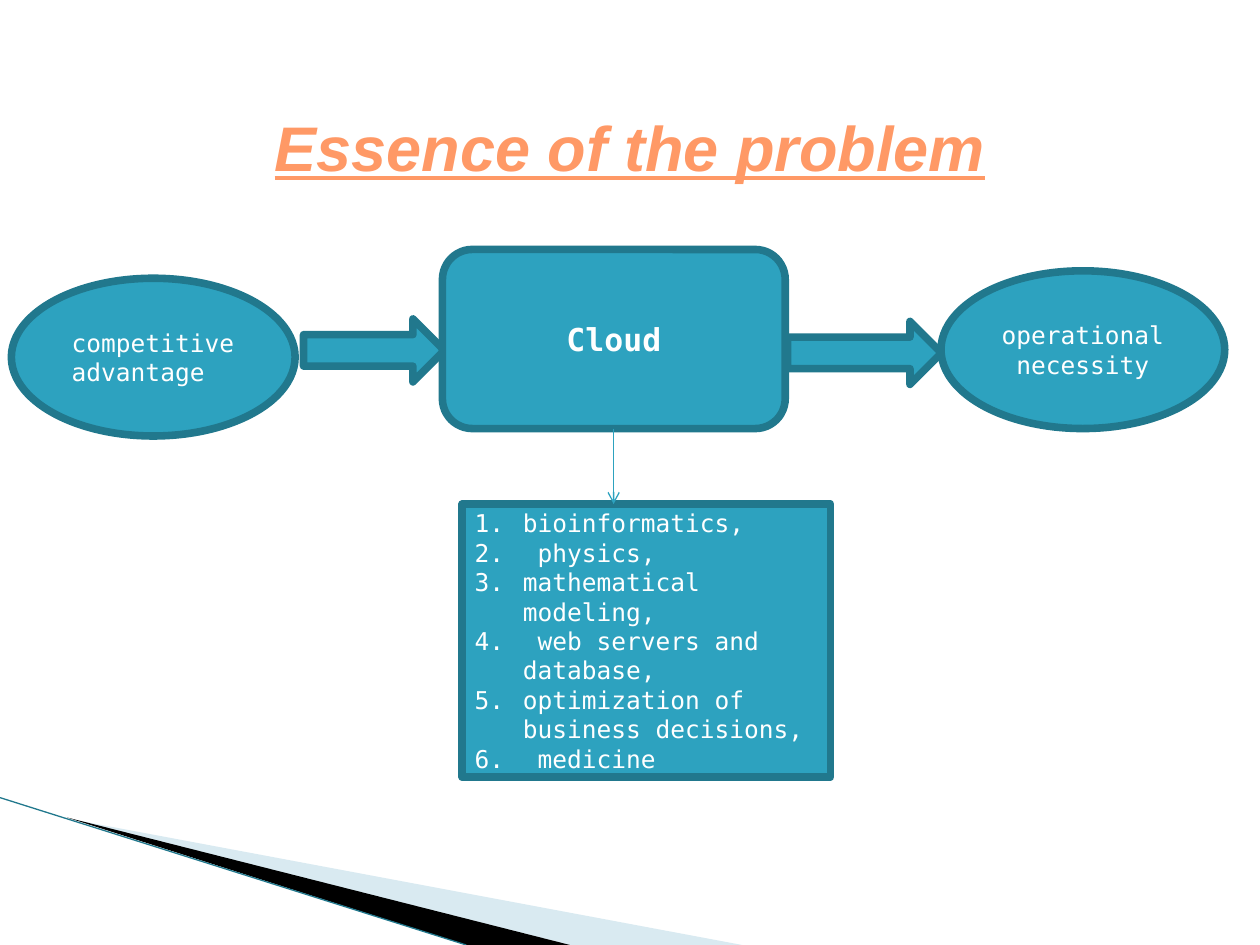
from dataclasses import dataclass
from typing import Any

from pptx import Presentation
from pptx.dml.color import RGBColor
from pptx.enum.shapes import MSO_CONNECTOR, MSO_SHAPE
from pptx.enum.text import MSO_ANCHOR, PP_ALIGN
from pptx.oxml.ns import qn
from pptx.util import Cm, Pt
from lxml.etree import SubElement


@dataclass(frozen=True)
class Theme:
    fill: RGBColor = RGBColor(0x2D, 0xA2, 0xBF)
    outline: RGBColor = RGBColor(0x21, 0x78, 0x8D)
    title: RGBColor = RGBColor(0xFF, 0x99, 0x66)
    text: RGBColor = RGBColor(0xFF, 0xFF, 0xFF)
    pale: RGBColor = RGBColor(0xD9, 0xEA, 0xF1)
    dark: RGBColor = RGBColor(0, 0, 0)
    title_font: str = "Arial"
    body_font: str = "DejaVu Sans Mono"
    title_size: Pt = Pt(36)
    heading_size: Pt = Pt(18)
    body_size: Pt = Pt(14)
    outline_width: Pt = Pt(4.33)
    thin_width: Pt = Pt(0.75)


THEME = Theme()
BODY = {"name": THEME.body_font, "size": THEME.body_size, "bold": False}
HEADING = {**BODY, "size": THEME.heading_size, "bold": True}
TITLE = {"name": THEME.title_font, "size": THEME.title_size,
         "bold": True, "italic": True, "underline": True}


@dataclass(frozen=True)
class Node:
    """A filled outline shape, placed in centimetres."""
    kind: MSO_SHAPE
    left: float
    top: float
    width: float
    height: float
    lines: tuple[str, ...] = ()
    font: Any = None
    align: PP_ALIGN = PP_ALIGN.CENTER
    inset: float = 0.25
    numbered: bool = False


@dataclass(frozen=True)
class Wedge:
    points: tuple[tuple[float, float], ...]
    color: RGBColor


WEDGES = (
    Wedge(((1.4, 16.51), (14.96, 19.05), (11.49, 19.05)), THEME.pale),
    Wedge(((1.35, 16.48), (11.49, 19.05), (9.4, 19.05)), THEME.dark),
)
NODES = (
    Node(MSO_SHAPE.RIGHT_ARROW, 15.88, 6.48, 3.1, 1.27),
    Node(MSO_SHAPE.RIGHT_ARROW, 6.12, 6.43, 2.84, 1.27),
    Node(MSO_SHAPE.OVAL, 0.23, 5.61, 5.72, 3.18, ("competitive advantage",),
         BODY, PP_ALIGN.LEFT, 0.38),
    Node(MSO_SHAPE.OVAL, 18.97, 5.46, 5.72, 3.18, ("operational necessity",), BODY),
    Node(MSO_SHAPE.ROUNDED_RECTANGLE, 8.92, 5.03, 6.91, 3.61, ("Cloud",), HEADING),
    Node(MSO_SHAPE.RECTANGLE, 9.32, 10.16, 7.42, 5.51,
         ("bioinformatics,", " physics,", "mathematical modeling,",
          " web servers and database,", "optimization of business decisions,",
          " medicine"),
         BODY, PP_ALIGN.LEFT, numbered=True),
)


def number_paragraph(para: Any) -> None:
    properties = para._p.get_or_add_pPr()
    indent = Cm(0.97)
    properties.set("marL", str(indent))
    properties.set("indent", str(-indent))
    SubElement(properties, qn("a:buFont"), typeface="+mj-lt")
    SubElement(properties, qn("a:buAutoNum"), type="arabicPeriod")


def write_line(para: Any, text: str, font: dict[str, Any],
               color: RGBColor, align: PP_ALIGN) -> None:
    para.alignment = align
    span = para.add_run()
    span.text = text
    for name, value in font.items():
        setattr(span.font, name, value)
    span.font.color.rgb = color


def prepare_frame(frame: Any, inset: float = 0.25) -> None:
    settings = {"word_wrap": True, "vertical_anchor": MSO_ANCHOR.MIDDLE,
                "margin_left": Cm(inset)}
    for name, value in settings.items():
        setattr(frame, name, value)


def paint(shape: Any, color: RGBColor) -> None:
    shape.shadow.inherit = False
    shape.fill.solid()
    shape.fill.fore_color.rgb = color


def draw_wedge(page: Any, wedge: Wedge) -> None:
    first, *rest = [(Cm(x), Cm(y)) for x, y in wedge.points]
    builder = page.shapes.build_freeform(*first)
    builder.add_line_segments(rest, close=True)
    shape = builder.convert_to_shape()
    paint(shape, wedge.color)
    shape.line.fill.background()


def draw_node(page: Any, node: Node) -> None:
    shape = page.shapes.add_shape(node.kind, Cm(node.left), Cm(node.top),
                                  Cm(node.width), Cm(node.height))
    paint(shape, THEME.fill)
    shape.line.color.rgb = THEME.outline
    shape.line.width = THEME.outline_width
    frame = shape.text_frame
    prepare_frame(frame, node.inset)
    for index, text in enumerate(node.lines):
        para = frame.add_paragraph() if index else frame.paragraphs[0]
        if node.numbered:
            number_paragraph(para)
        write_line(para, text, node.font, THEME.text, node.align)


def draw_line(page: Any, start: tuple[float, float], end: tuple[float, float],
              color: RGBColor, arrow: bool = False) -> None:
    line = page.shapes.add_connector(MSO_CONNECTOR.STRAIGHT,
                                     *map(Cm, start), *map(Cm, end))
    line.line.color.rgb = color
    line.line.width = THEME.thin_width
    if arrow:
        SubElement(line.line._get_or_add_ln(), qn("a:tailEnd"), type="arrow")
    SubElement(line._element.spPr, qn("a:effectLst"))


def draw_title(page: Any, text: str) -> None:
    box = page.shapes.add_textbox(Cm(1.27), Cm(0.43), Cm(22.86), Cm(5.03))
    prepare_frame(box.text_frame)
    write_line(box.text_frame.paragraphs[0], text, TITLE, THEME.title, PP_ALIGN.CENTER)


def main() -> None:
    deck = Presentation()
    deck.slide_width, deck.slide_height = Cm(25.4), Cm(19.05)
    page = deck.slides.add_slide(deck.slide_layouts[6])
    for wedge in WEDGES:
        draw_wedge(page, wedge)
    draw_line(page, (0, 16.08), (9.4, 19.05), THEME.outline)
    draw_title(page, "Essence of the problem")
    for node in NODES:
        draw_node(page, node)
    draw_line(page, (12.37, 8.64), (12.37, 10.16), THEME.fill, arrow=True)
    deck.save("out.pptx")


if __name__ == "__main__":
    main()
